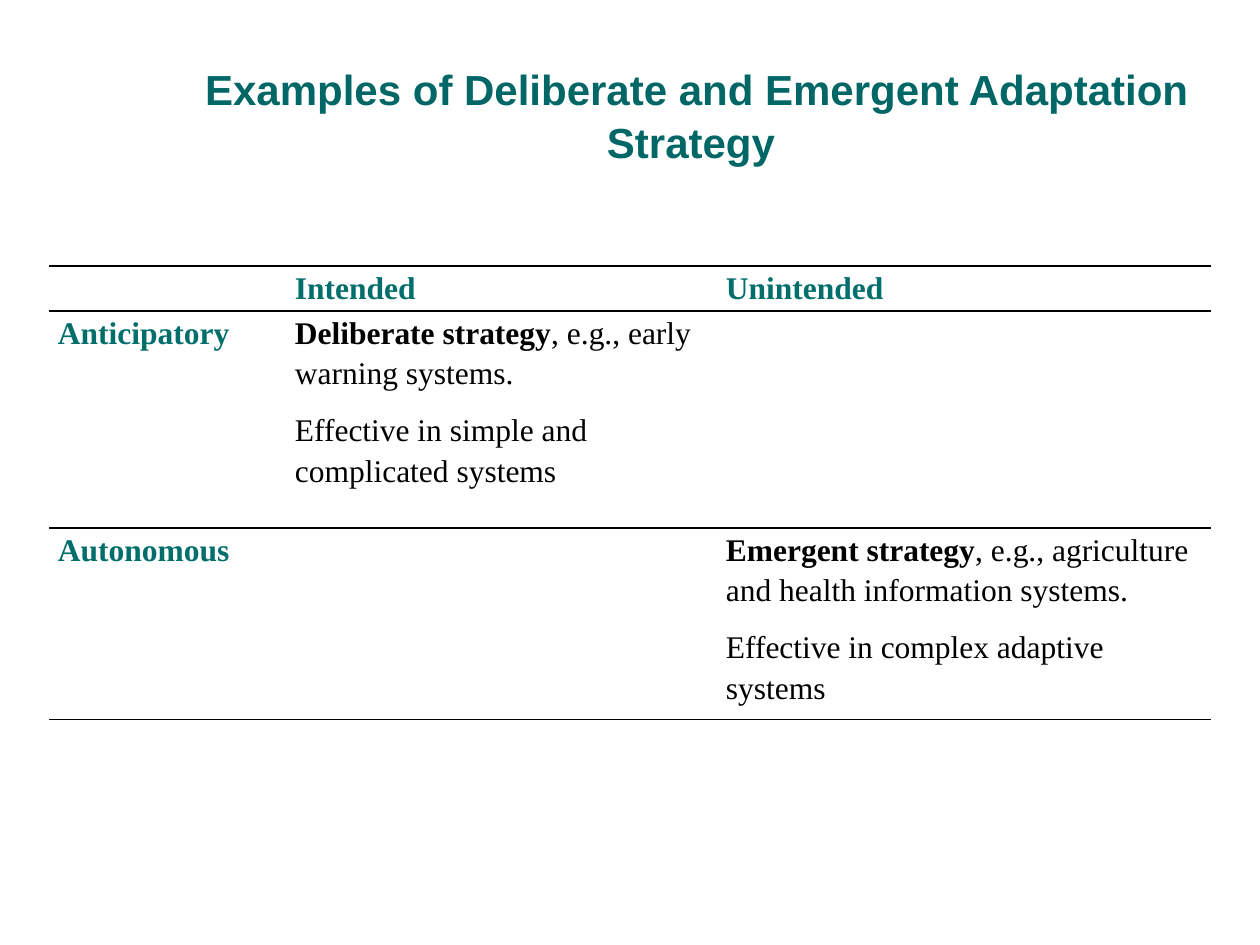
from lxml import etree
from pptx import Presentation
from pptx.dml.color import RGBColor
from pptx.enum.text import MSO_ANCHOR, PP_ALIGN
from pptx.oxml.ns import qn
from pptx.util import Pt

PX = 914400 // 126
MIDDLE, CENTER = MSO_ANCHOR.MIDDLE, PP_ALIGN.CENTER
TEAL, BLACK = "006E6B", "000000"


def style(font, name, size, color, bold):
    font.name, font.size, font.bold = name, Pt(size), bold
    font.color.rgb = RGBColor.from_string(color)


def border(cell, side, width):
    line = etree.SubElement(cell._tc.get_or_add_tcPr(), qn("a:ln" + side))
    if width:
        line.set("w", str(Pt(width)))
        fill = etree.SubElement(line, qn("a:solidFill"))
        etree.SubElement(fill, qn("a:srgbClr"), val=BLACK)
    else:
        etree.SubElement(line, qn("a:noFill"))


deck = Presentation()
deck.slide_width, deck.slide_height = 1260 * PX, 945 * PX
slide = deck.slides.add_slide(deck.slide_layouts[6])

# Title
box = slide.shapes.add_textbox(157 * PX, 59 * PX, 1068 * PX, 110 * PX)
frame = box.text_frame
frame.word_wrap = True
frame.vertical_anchor = MIDDLE
para = frame.paragraphs[0]
para.text = " Examples of Deliberate and Emergent Adaptation Strategy"
para.alignment = CENTER
para.line_spacing = 1.05
style(para.font, "Arial", 24, "006666", True)

# Table grid
widths = [237, 431, 494]
heights = [45, 217, 178]
table = slide.shapes.add_table(3, 3, 49 * PX, 266 * PX,
                               sum(widths) * PX, sum(heights) * PX).table
table.first_row = table.horz_banding = False
for col, width in zip(table.columns, widths):
    col.width = width * PX
for row, height in zip(table.rows, heights):
    row.height = height * PX

# Each paragraph is a bold lead and a plain rest
cells = [
    [[("", "")], [("Intended", "")], [("Unintended", "")]],
    [[("Anticipatory", "")],
     [("Deliberate strategy", ", e.g., early warning systems."),
      ("", "Effective in simple and complicated systems")],
     [("", "")]],
    [[("Autonomous", "")],
     [("", "")],
     [("Emergent strategy", ", e.g., agriculture and health information systems."),
      ("", "Effective in complex adaptive systems")]],
]
rules = [1, 0.75, 1, 1]
for r, row in enumerate(cells):
    for c, paras in enumerate(row):
        cell = table.cell(r, c)
        cell.margin_left = cell.margin_right = 9 * PX
        cell.margin_top = cell.margin_bottom = 0
        for side, width in zip("LRTB", (0, 0, rules[r], rules[r + 1])):
            border(cell, side, width)
        cell.fill.background()
        color = TEAL if r == 0 or c == 0 else BLACK
        frame = cell.text_frame
        for i, (lead, rest) in enumerate(paras):
            para = frame.add_paragraph() if i else frame.paragraphs[0]
            para.line_spacing = 1.15
            para.space_after = Pt(10)
            style(para.font, "Times New Roman", 18, color, not rest)
            for text, bold in ((lead, True), (rest, False)):
                if text:
                    run = para.add_run()
                    run.text = text
                    run.font.bold = bold

deck.save("out.pptx")
